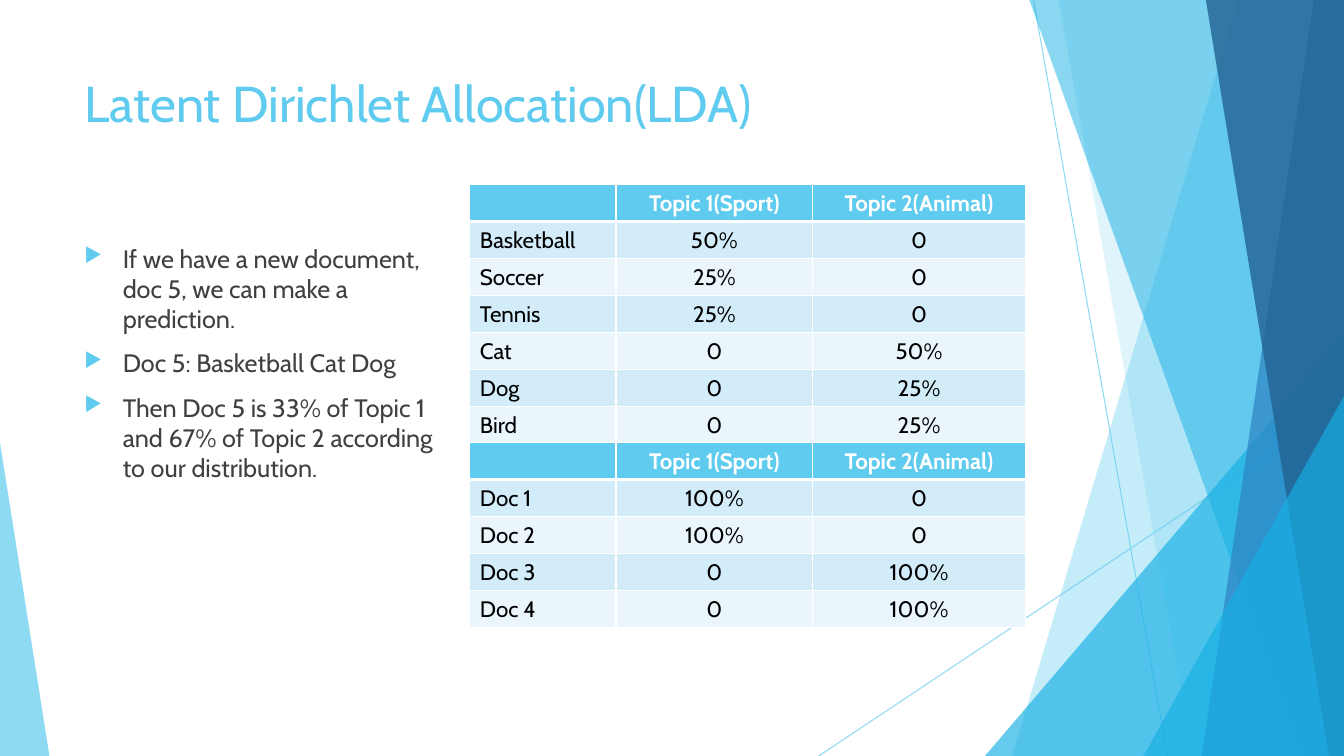
"""Build the Latent Dirichlet Allocation slide with its topic and document tables."""
from dataclasses import dataclass

from pptx import Presentation
from pptx import util as u
from pptx.dml import color
from pptx.enum import shapes, text
from pptx.oxml import parse_xml
from pptx.oxml.ns import nsdecls, qn

WIDTH, HEIGHT = 13.33, 7.5
FONT = "Cabin"
SKY, AZURE, BLUE, NAVY = "5FCBEF", "17B0E4", "2E83C3", "226292"
WHITE, BLACK, GREY = "FFFFFF", "000000", "404040"
BANDS = ("D2ECF9", "EAF6FC")
LEFT = 5.55
TABLE_LEFT, COLUMNS, ROW = 34.96, (10.88, 14.63, 15.83), 4.9


@dataclass
class Ray:
    """Thin line between two points, in percent of the slide."""
    x1: float
    y1: float
    x2: float
    y2: float


@dataclass
class Wedge:
    """Full-height facet from a slanted left edge to the right slide edge."""
    top: float
    bottom: float
    fill: str
    alpha: int


@dataclass
class Corner:
    """Triangle standing on the bottom slide edge."""
    x: float
    y: float
    width: float
    apex: float
    fill: str
    alpha: int


@dataclass
class Grid:
    """Table of topic shares and its top edge."""
    top: float
    rows: list[tuple[str, str, str]]


DECOR = [
    Ray(76.9, 0, 86.87, 100),
    Ray(100, 53.73, 60.92, 100),
    Wedge(92.12, 75.32, SKY, 36),
    Wedge(78.77, 88.75, SKY, 20),
    Corner(73.29, 44.4, 26.71, 1, AZURE, 66),
    Wedge(76.59, 96.85, AZURE, 50),
    Wedge(97.75, 89.42, BLUE, 70),
    Wedge(89.72, 98.87, NAVY, 80),
    Corner(85.07, 52.4, 14.93, 1, AZURE, 66),
    Corner(0, 58.53, 3.68, 0, SKY, 70),
]
HEADER = ("", "Topic 1(Sport)", "Topic 2(Animal)")
GRIDS = [
    Grid(24.4, [HEADER, ("Basketball", "50%", "0"), ("Soccer", "25%", "0"), ("Tennis", "25%", "0"),
                ("Cat", "0", "50%"), ("Dog", "0", "25%"), ("Bird", "0", "25%")]),
    Grid(58.53, [HEADER, ("Doc 1", "100%", "0"), ("Doc 2", "100%", "0"),
                 ("Doc 3", "0", "100%"), ("Doc 4", "0", "100%")]),
]
POINTS = [
    "If we have a new document, doc 5, we can make a prediction.",
    "Doc 5: Basketball Cat Dog",
    "Then Doc 5 is 33% of Topic 1 and 67% of Topic 2 according to our distribution.",
]


def px(share: float) -> int:
    """Turn a percentage of the slide width into a length."""
    return u.Inches(WIDTH * share / 100)


def py(share: float) -> int:
    """Turn a percentage of the slide height into a length."""
    return u.Inches(HEIGHT * share / 100)


def paint(fill, hex_color: str, alpha: int = 100) -> None:
    """Apply a solid colour, optionally translucent."""
    fill.solid()
    fill.fore_color.rgb = color.RGBColor.from_string(hex_color)
    if alpha < 100:
        srgb = fill._xPr.find(qn("a:solidFill"))[0]
        srgb.append(parse_xml(f'<a:alpha {nsdecls("a")} val="{alpha * 1000}"/>'))


def add_run(p, content: str, size: int, hex_color: str, bold: bool = False) -> None:
    """Append one formatted run to a paragraph."""
    r = p.add_run()
    r.text = content
    r.font.name, r.font.size, r.font.bold = FONT, u.Pt(size), bold
    paint(r.font.fill, hex_color)


def add_decor(s, item: Ray | Wedge | Corner) -> None:
    """Draw one piece of the faceted background."""
    if isinstance(item, Ray):
        line = s.shapes.add_connector(shapes.MSO_CONNECTOR.STRAIGHT,
                                      px(item.x1), py(item.y1), px(item.x2), py(item.y2))
        line.line.width = u.Pt(0.75)
        paint(line.line.fill, SKY, 70)
        line._element.spPr.append(parse_xml(f'<a:effectLst {nsdecls("a")}/>'))
        return
    if isinstance(item, Wedge):
        builder = s.shapes.build_freeform(px(item.top), 0)
        builder.add_line_segments([(px(100), 0), (px(100), py(100)), (px(item.bottom), py(100))])
        sp = builder.convert_to_shape()
    else:
        sp = s.shapes.add_shape(shapes.MSO_SHAPE.ISOSCELES_TRIANGLE,
                                px(item.x), py(item.y), px(item.width), py(100 - item.y))
        sp.adjustments[0] = item.apex
    sp.shadow.inherit = False
    sp.line.fill.background()
    paint(sp.fill, item.fill, item.alpha)


def add_box(s, y: float, width: float, height: float):
    """Add a wrapping text box on the left margin and return its frame."""
    tf = s.shapes.add_textbox(px(LEFT), py(y), px(width), py(height)).text_frame
    tf.word_wrap = True
    return tf


def add_bullets(tf, points: list[str]) -> None:
    """Fill a frame with triangle-bulleted paragraphs."""
    for i, point in enumerate(points):
        p = tf.paragraphs[0] if i == 0 else tf.add_paragraph()
        pPr = p._p.get_or_add_pPr()
        indent = u.Inches(0.38)
        pPr.set("marL", str(indent))
        pPr.set("indent", str(-indent))
        for xml in (f'<a:buClr {nsdecls("a")}><a:srgbClr val="{SKY}"/></a:buClr>',
                    f'<a:buSzPct {nsdecls("a")} val="80000"/>',
                    f'<a:buChar {nsdecls("a")} char="▶"/>'):
            pPr.append(parse_xml(xml))
        p.space_before = u.Pt(10 if i else 0)
        add_run(p, point, 18, GREY)


def add_borders(cell, bottom: int) -> None:
    """Give a cell white borders with the chosen bottom width in points."""
    tcPr = cell._tc.get_or_add_tcPr()
    for side, width in (("L", 1), ("R", 1), ("T", 1), ("B", bottom)):
        tcPr.append(parse_xml(
            f'<a:ln{side} {nsdecls("a")} w="{u.Pt(width)}"><a:solidFill>'
            f'<a:srgbClr val="{WHITE}"/></a:solidFill></a:ln{side}>'))


def add_grid(s, grid: Grid) -> None:
    """Draw one table with a header row and banded rows."""
    table = s.shapes.add_table(len(grid.rows), len(COLUMNS), px(TABLE_LEFT), py(grid.top),
                               px(sum(COLUMNS)), py(ROW * len(grid.rows))).table
    for column, width in zip(table.columns, COLUMNS):
        column.width = px(width)
    for i, row in enumerate(grid.rows):
        table.rows[i].height = py(ROW)
        head = i == 0
        for j, content in enumerate(row):
            cell = table.cell(i, j)
            add_borders(cell, 3 if i < 1 else 1)
            paint(cell.fill, SKY if head else BANDS[(i - 1) % 2])
            p = cell.text_frame.paragraphs[0]
            if j:
                p.alignment = text.PP_ALIGN.CENTER
            if content:
                add_run(p, content, 16, WHITE if head else BLACK, head)
            else:
                p._p.append(parse_xml(f'<a:endParaRPr {nsdecls("a")} sz="1600"/>'))


def main() -> None:
    """Assemble and save the slide."""
    prs = Presentation()
    prs.slide_width, prs.slide_height = px(100), py(100)
    s = prs.slides.add_slide(prs.slide_layouts[6])
    for item in DECOR:
        add_decor(s, item)
    add_run(add_box(s, 8.93, 70.52, 19.2).paragraphs[0], "Latent Dirichlet Allocation(LDA)", 36, SKY)
    add_bullets(add_box(s, 31.47, 29.11, 56.53), POINTS)
    for grid in GRIDS:
        add_grid(s, grid)
    prs.save("out.pptx")


if __name__ == "__main__":
    main()
